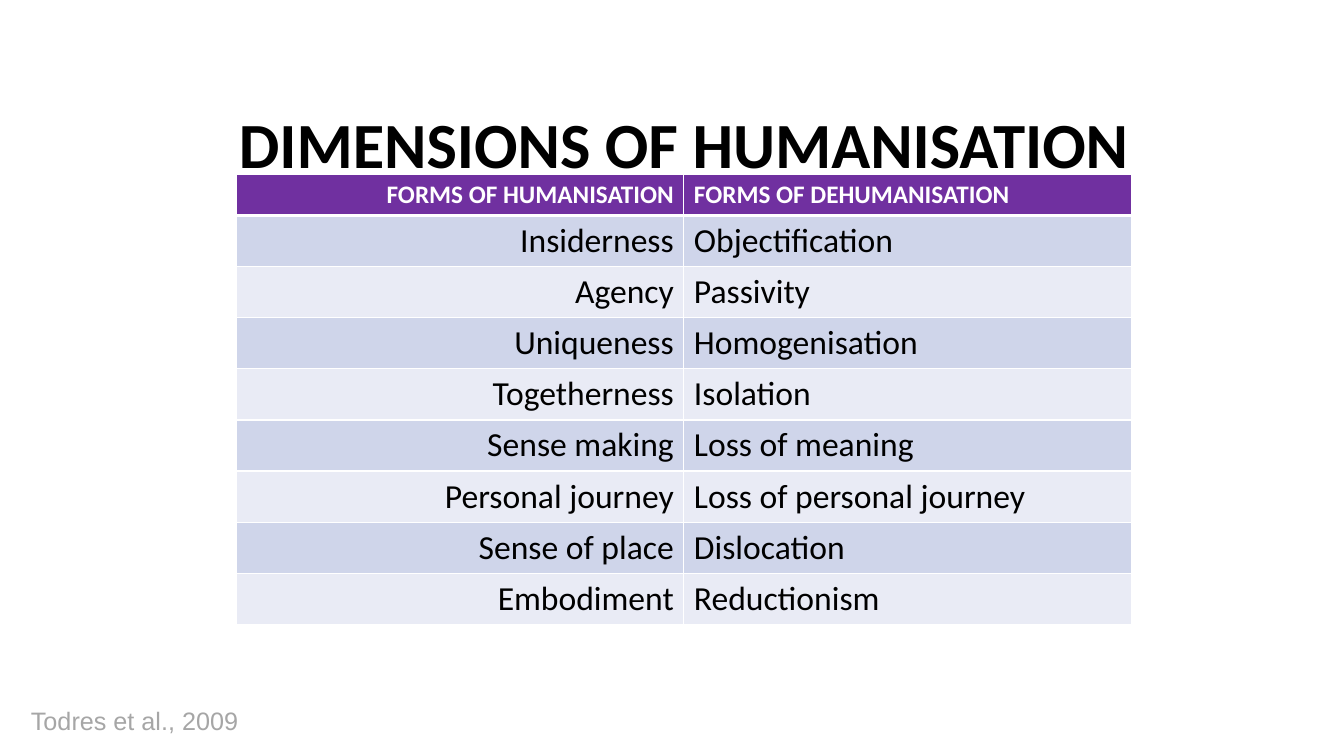
import pptx
import pptx.util
import pptx.dml.color
import pptx.enum.text
import pptx.oxml.ns
import lxml.etree
from dataclasses import dataclass

Cm = pptx.util.Cm
Pt = pptx.util.Pt
ALIGN = pptx.enum.text.PP_ALIGN


@dataclass(frozen=True)
class Theme:
    head: str = "7030A0"
    bands: tuple = ("CFD5EA", "E9EBF5")
    white: str = "FFFFFF"
    black: str = "000000"
    grey: str = "A6A6A6"
    font: str = "Calibri"
    plain: str = "Arial"
    title: int = 46
    body: int = 24
    small: int = 18


theme = Theme()


def write(frame, text, size, color, font, bold=False, align=ALIGN.LEFT):
    """Fill a text frame with one paragraph in one style."""
    frame.text = text
    par = frame.paragraphs[0]
    par.alignment = align
    for run in par.runs:
        run.font.size = Pt(size)
        run.font.name = font
        run.font.bold = bold
        run.font.color.rgb = pptx.dml.color.RGBColor.from_string(color)


def border(cell, side, width):
    """Draw a white line on one side (L, R, T or B) of a cell."""
    qn = pptx.oxml.ns.qn
    props = cell._tc.get_or_add_tcPr()
    line = lxml.etree.SubElement(props, qn(f"a:ln{side}"), w=str(Pt(width)))
    fill = lxml.etree.SubElement(line, qn("a:solidFill"))
    lxml.etree.SubElement(fill, qn("a:srgbClr"), val=theme.white)


deck = pptx.Presentation()
deck.slide_width = Cm(33.87)
deck.slide_height = Cm(19.05)
slide = deck.slides.add_slide(deck.slide_layouts[6])

# Table of paired forms
pairs = [
    ("FORMS OF HUMANISATION", "FORMS OF DEHUMANISATION"),
    ("Insiderness", "Objectification"),
    ("Agency", "Passivity"),
    ("Uniqueness", "Homogenisation"),
    ("Togetherness", "Isolation"),
    ("Sense making", "Loss of meaning"),
    ("Personal journey", "Loss of personal journey"),
    ("Sense of place", "Dislocation"),
    ("Embodiment", "Reductionism"),
]
head_high, row_high = 1.03, 1.28
high = head_high + row_high * (len(pairs) - 1)
table = slide.shapes.add_table(
    len(pairs), 2, Cm(5.95), Cm(4.4), Cm(22.57), Cm(high)).table

for r, pair in enumerate(pairs):
    head = r == 0
    table.rows[r].height = Cm(head_high if head else row_high)
    shade = theme.head if head else theme.bands[(r - 1) % 2]
    for c, text in enumerate(pair):
        cell = table.cell(r, c)
        for side in "LRTB":
            thick = (head and side == "B") or (r == 1 and side == "T")
            border(cell, side, 3 if thick else 1)
        cell.fill.solid()
        cell.fill.fore_color.rgb = pptx.dml.color.RGBColor.from_string(shade)
        write(cell.text_frame, text,
              theme.small if head else theme.body,
              theme.white if head else theme.black,
              theme.font, head, ALIGN.LEFT if c else ALIGN.RIGHT)

# Title and source
title = slide.shapes.add_textbox(Cm(5.05), Cm(2.5), Cm(24.36), Cm(2.23))
title.text_frame.word_wrap = True
write(title.text_frame, "DIMENSIONS OF HUMANISATION", theme.title,
      theme.black, theme.font, True, ALIGN.CENTER)

source = slide.shapes.add_textbox(Cm(0.53), Cm(17.65), Cm(20.07), Cm(1.02))
source.text_frame.word_wrap = True
write(source.text_frame, "Todres et al., 2009", theme.small,
      theme.grey, theme.plain)

deck.save("out.pptx")
